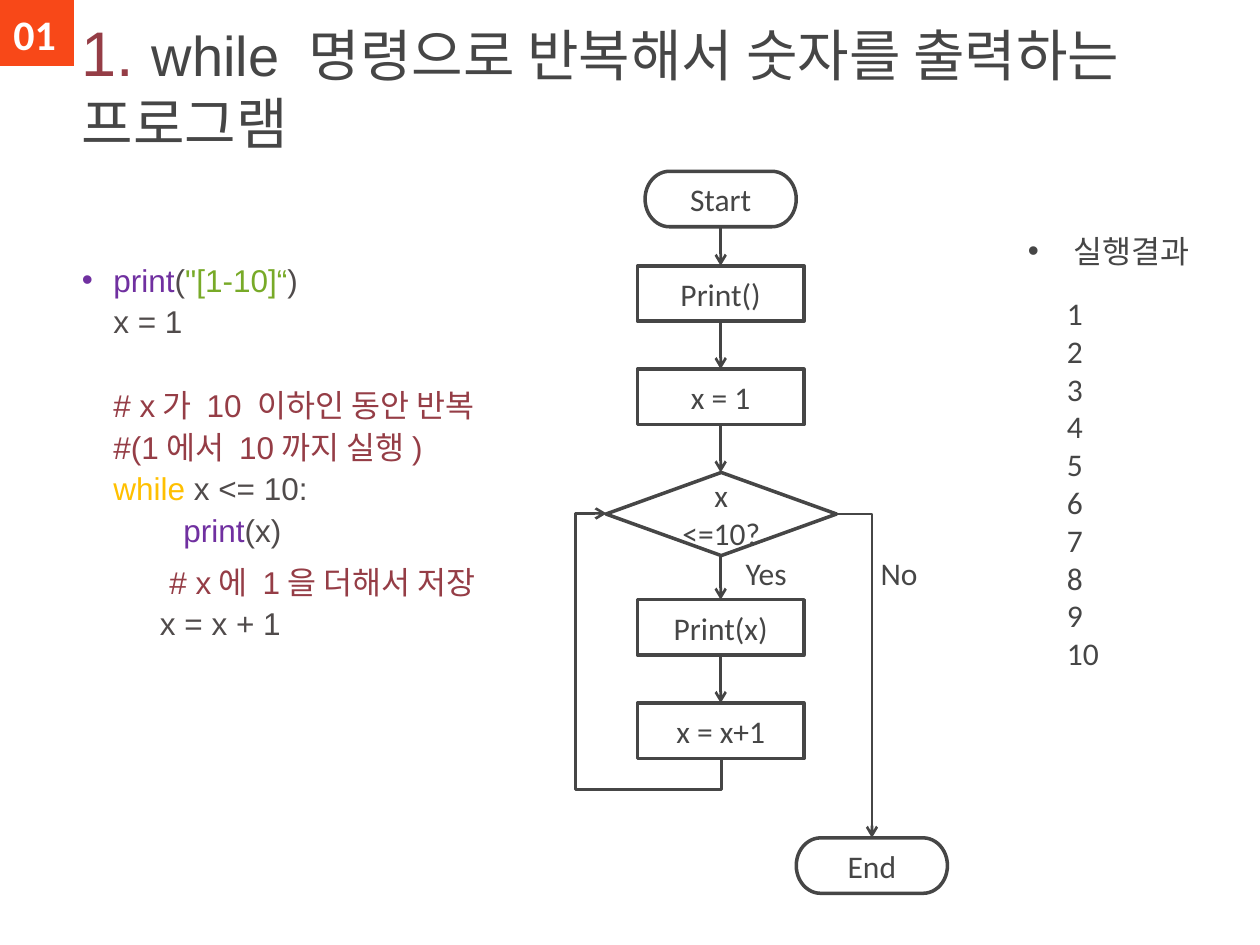
import copy
from lxml import etree
from pptx import Presentation
from pptx import util as u
from pptx.dml.color import RGBColor
from pptx.enum import shapes, text
from pptx.oxml.ns import qn

PX = 9144  # 100 px to the inch
HEX = dict(ink="464646", line="444444", code="504B4B", note="953D46", func="7030A0",
           word="FFC000", quote="78AA28", tag="F84818", white="FFFFFF")
KIND = shapes.MSO_SHAPE
MID = 572  # centre line of the flow


def rgb(name):
    return RGBColor.from_string(HEX[name])


def apply(obj, vals):
    for key, val in vals.items():
        setattr(obj, key, val)


class Page:
    def __init__(self, slide, face="Calibri", size=18):
        self.slide, self.face, self.size = slide, face, size

    def frame(self, shape, **vals):
        base = dict(word_wrap=True, auto_size=text.MSO_AUTO_SIZE.NONE)
        apply(shape.text_frame, {**base, **vals})
        return shape.text_frame

    def place(self, shape, *box):
        apply(shape, dict(zip(("left", "top", "width", "height"), (v * PX for v in box))))
        return shape

    def para(self, frame, runs, first=True, mark=None, left=0, **vals):
        """Fill a paragraph from (text, colour, font values); a newline is a line break."""
        par = frame.paragraphs[0] if first else frame.add_paragraph()
        prop = par._p.get_or_add_pPr()
        prop.set("marL", str(left * PX))
        prop.set("indent", str(-left * PX if mark else 0))
        if mark:
            etree.SubElement(prop, qn("a:buFont")).set("typeface", "Arial")
            etree.SubElement(prop, qn("a:buChar")).set("char", mark)
        else:
            etree.SubElement(prop, qn("a:buNone"))
        apply(par, vals)
        for words, hue, *more in runs:
            style = dict(name=self.face, size=u.Pt(self.size))
            for extra in more:
                style.update(extra)
            for num, line in enumerate(words.split("\n")):
                if num:
                    par.add_line_break()
                    par._p[-1].append(copy.deepcopy(look))
                run = par.add_run()
                run.text = line
                apply(run.font, style)
                run.font.color.rgb = rgb(hue)
                look = run._r.rPr
                if not line:
                    par._p.remove(run._r)

    def holder(self, num, box, anchor):
        shape = self.place(self.slide.placeholders[num], *box)
        return self.frame(shape, vertical_anchor=anchor)

    def label(self, box, **vals):
        return self.frame(self.slide.shapes.add_textbox(*(v * PX for v in box)), **vals)

    def block(self, kind, box, words="", fill=None):
        shape = self.slide.shapes.add_shape(kind, *(v * PX for v in box))
        shape.shadow.inherit = False
        if fill:
            shape.fill.solid()
            shape.fill.fore_color.rgb = rgb(fill)
            shape.line.fill.background()
        else:
            shape.fill.background()
            shape.line.color.rgb = rgb("ink")
            shape.line.width = u.Pt(2)
        if words:
            frame = self.frame(shape, vertical_anchor=text.MSO_ANCHOR.MIDDLE)
            self.para(frame, [(words, "ink")], alignment=text.PP_ALIGN.CENTER)

    def arrow(self, ends, hue="line", bend=None, guides=(), turn=None):
        kind = shapes.MSO_CONNECTOR.ELBOW if bend else shapes.MSO_CONNECTOR.STRAIGHT
        link = self.slide.shapes.add_connector(kind, *(v * PX for v in ends))
        link.line.color.rgb = rgb(hue)
        link.line.width = u.Pt(1.5)
        prop = link._element.spPr
        etree.SubElement(prop.find(qn("a:ln")), qn("a:tailEnd")).set("type", "arrow")
        etree.SubElement(prop, qn("a:effectLst"))
        if bend:
            geom = prop.find(qn("a:prstGeom"))
            geom.set("prst", bend)
            for num, val in enumerate(guides, 1):
                guide = etree.SubElement(geom.find(qn("a:avLst")), qn("a:gd"))
                guide.set("name", f"adj{num}")
                guide.set("fmla", f"val {val}")
        for key, val in (turn or {}).items():
            prop.find(qn("a:xfrm")).set(key, val)


def write(page):
    page.face = "Arial"
    head = page.holder(0, (55, 41, 980, 88), text.MSO_ANCHOR.BOTTOM)
    page.para(head, [("1. ", "note", dict(size=u.Pt(36))),
                     ("while 명령으로 반복해서 숫자를 출력하는 프로그램", "ink", dict(size=u.Pt(32)))],
              alignment=text.PP_ALIGN.LEFT)
    body = page.holder(1, (55, 199, 376, 353), text.MSO_ANCHOR.TOP)
    parts = [
        ([("print", "func"), ("(", "code"), ("\"[1-10]“", "quote"), (")\nx = 1", "code")],
         dict(mark="•", left=25, space_before=u.Pt(0))),
        ([("# x가 10 이하인 동안 반복\n#(1에서 10까지 실행)\n", "note"), ("while", "word"),
          (" x <= 10:\n        ", "code"), ("print", "func"), ("(x)", "code")],
         dict(left=25, space_before=u.Pt(24))),
        ([("          # x에 1을 더해서 저장\n", "note"), ("          x = x + 1", "code")],
         dict(space_before=u.Pt(6))),
    ]
    for num, (runs, vals) in enumerate(parts):
        page.para(body, runs, first=not num, line_spacing=1.1, **vals)

    page.face = "Calibri"
    page.block(KIND.FLOWCHART_PROCESS, (0, 0, 59, 52), fill="tag")
    page.para(page.label((-12, 2, 79, 50)),
              [("01", "white", dict(size=u.Pt(24), bold=True))],
              alignment=text.PP_ALIGN.CENTER)
    out = page.label((806, 179, 183, 391))
    page.para(out, [("실행결과", "ink")], mark="•", left=36)
    page.para(out, [("\n".join(str(n) for n in range(1, 11)), "ink")], first=False,
              left=31, space_before=u.Pt(14))


def draw(page):
    step, ends = KIND.FLOWCHART_PROCESS, KIND.FLOWCHART_TERMINATOR
    flow = [(ends, 136, 120, 44, "Start"), (step, 211, 132, 44, "Print()"),
            (step, 293, 132, 44, "x = 1"),
            (KIND.FLOWCHART_DECISION, 375, 183, 66, "x <=10?"),
            (step, 476, 132, 44, "Print(x)"), (step, 558, 132, 44, "x = x+1")]
    for kind, top, wide, high, words in flow:
        page.block(kind, (MID - wide // 2, top, wide, high), words)
    for above, below in zip(flow, flow[1:]):
        page.arrow((MID, above[1] + above[3], MID, below[1]))
    page.block(ends, (632, 665, 120, 44), "End")
    page.arrow((664, 408, 692, 665), "ink", "bentConnector2")
    # The loop back to the test: a quarter turn of a mirrored four-part bend
    page.arrow((430, 459, 624, 550), "ink", "bentConnector4", (-12900, 127400),
               dict(rot="5400000", flipH="1"))
    for left, words in ((582, "Yes"), (689, "No")):
        page.para(page.label((left, 435, 53, 40), word_wrap=False), [(words, "ink")])


def main():
    deck = Presentation()
    apply(deck, dict(slide_width=1000 * PX, slide_height=750 * PX))
    page = Page(deck.slides.add_slide(deck.slide_layouts[1]))
    write(page)
    draw(page)
    deck.save("out.pptx")


if __name__ == "__main__":
    main()
